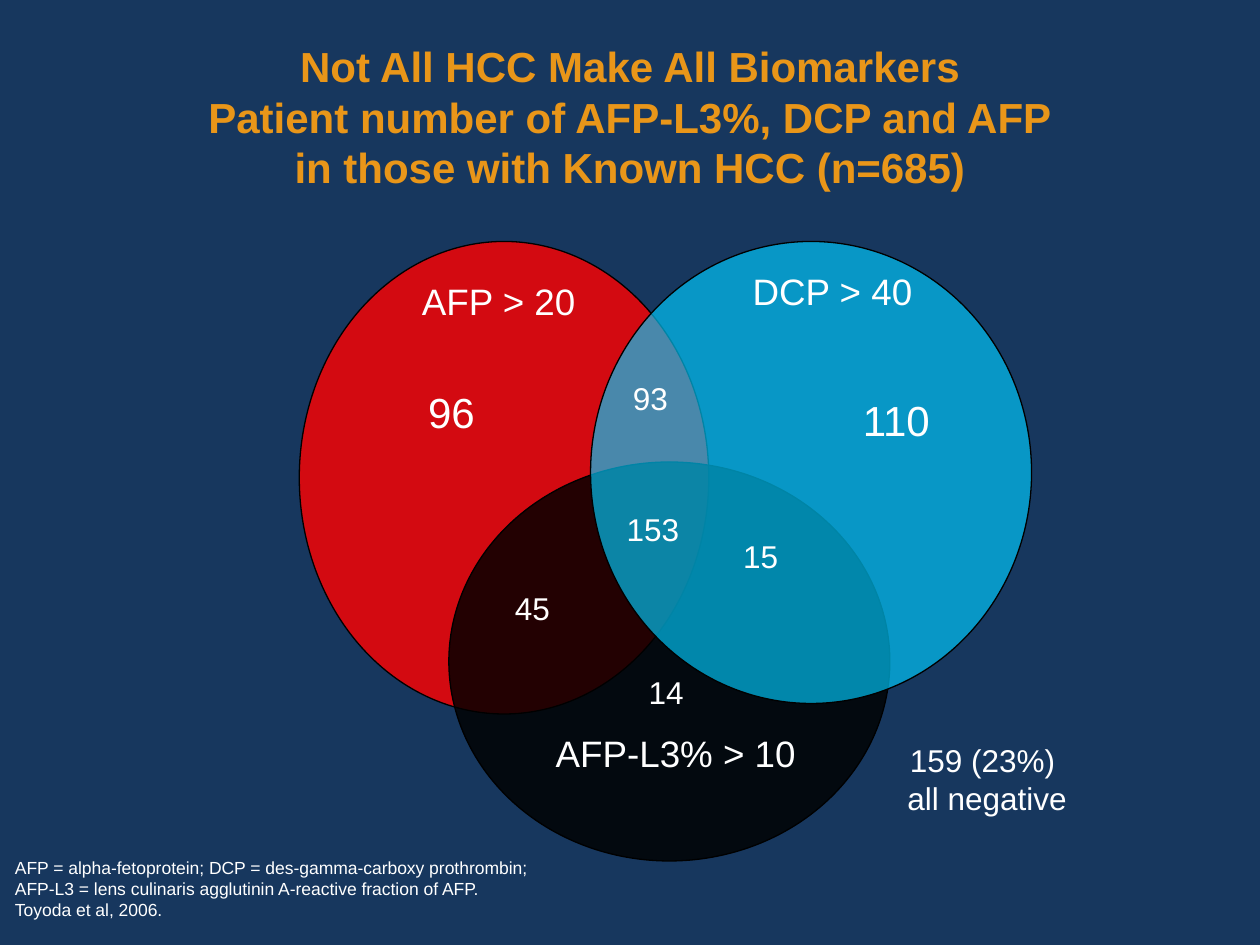
"""Draw a three-circle Venn slide of liver cancer biomarkers on a grid of 120 by 90 cells."""
import dataclasses
import typing

import lxml.etree
import pptx
import pptx.dml.color
import pptx.enum.shapes
import pptx.enum.text
import pptx.oxml.ns
import pptx.util

CELL = pptx.util.Inches(1) / 12
COLS, ROWS = 120, 90
FONT = "Arial"
HUES = {
    "back": "17375E",
    "title": "E99619",
    "text": "FFFFFF",
    "line": "000000",
    "red": "FF0000",
    "black": "000000",
    "blue": "00CCFF",
}
ALIGN = pptx.enum.text.PP_ALIGN


class Box(typing.NamedTuple):
    col: float
    row: float
    wide: float
    high: float

    def place(self) -> list[int]:
        return [round(part * CELL) for part in self]


@dataclasses.dataclass
class Ring:
    box: Box
    hue: str
    alpha: int


@dataclasses.dataclass
class Label:
    box: Box
    lines: list[str]
    size: int
    align: typing.Any = ALIGN.LEFT


RINGS = [
    Ring(Box(28.5, 23, 39, 45), "red", 81),
    Ring(Box(42.75, 44, 42, 38), "black", 83),
    Ring(Box(56.25, 23, 42, 44), "blue", 65),
]
NOTE = Label(
    Box(0.25, 81, 51.8, 7.3),
    [
        "AFP = alpha-fetoprotein; DCP = des-gamma-carboxy prothrombin;",
        "AFP-L3 = lens culinaris agglutinin A-reactive fraction of AFP.",
        "Toyoda et al, 2006.",
    ],
    10,
)
LABELS = [
    Label(Box(39, 26, 17.4, 5.4), ["AFP > 20"], 21),
    Label(Box(70.5, 25, 17.8, 5.4), ["DCP > 40"], 21),
    Label(Box(51.75, 69, 25.7, 5.4), ["AFP-L3% > 10"], 21),
    Label(Box(39.6, 36.2, 7.2, 6.1), ["96"], 24),
    Label(Box(81, 37, 9.2, 6.1), ["110"], 24),
    Label(Box(59.1, 35.5, 6, 4.8), ["93"], 18),
    Label(Box(58.5, 48, 7.6, 4.8), ["153"], 18),
    Label(Box(47.85, 55.5, 6, 4.8), ["45"], 18),
    Label(Box(60.6, 63.5, 6, 4.8), ["14"], 18),
    Label(Box(69.6, 50.55, 6, 4.8), ["15"], 18),
    Label(Box(85.1, 70, 17.8, 8.5), ["159 (23%) ", "all negative"], 18, ALIGN.CENTER),
]
TITLE = Label(
    Box(6, 3.6, 108, 15),
    [
        "Not All HCC Make All Biomarkers",
        "Patient number of AFP-L3%, DCP and AFP",
        "in those with Known HCC (n=685)",
    ],
    24,
    ALIGN.CENTER,
)


def color(name: str) -> pptx.dml.color.RGBColor:
    return pptx.dml.color.RGBColor.from_string(HUES[name])


def draw_ring(slide: typing.Any, ring: Ring) -> None:
    kind = pptx.enum.shapes.MSO_SHAPE.OVAL
    shape = slide.shapes.add_shape(kind, *ring.box.place())
    shape.shadow.inherit = False
    shape.fill.solid()
    shape.fill.fore_color.rgb = color(ring.hue)
    tag = pptx.oxml.ns.qn("a:srgbClr")
    fill = next(shape.element.spPr.iter(tag))
    alpha = lxml.etree.SubElement(fill, pptx.oxml.ns.qn("a:alpha"))
    alpha.set("val", str(ring.alpha * 1000))
    shape.line.color.rgb = color("line")
    shape.line.width = pptx.util.Pt(0.75)


def add_run(para: typing.Any, text: str, size: int, hue: str, bold: bool) -> None:
    run = para.add_run()
    run.text = text
    run.font.name = FONT
    run.font.size = pptx.util.Pt(size)
    run.font.bold = bold
    run.font.color.rgb = color(hue)


def draw_label(slide: typing.Any, label: Label) -> None:
    frame = slide.shapes.add_textbox(*label.box.place()).text_frame
    frame.word_wrap = False
    frame.auto_size = pptx.enum.text.MSO_AUTO_SIZE.SHAPE_TO_FIT_TEXT
    for rank, line in enumerate(label.lines):
        para = frame.add_paragraph() if rank else frame.paragraphs[0]
        para.alignment = label.align
        add_run(para, line, label.size, "text", False)


def draw_title(slide: typing.Any, label: Label) -> None:
    frame = slide.shapes.add_textbox(*label.box.place()).text_frame
    frame.word_wrap = True
    frame.vertical_anchor = pptx.enum.text.MSO_ANCHOR.MIDDLE
    para = frame.paragraphs[0]
    para.alignment = label.align
    for rank, line in enumerate(label.lines):
        if rank:
            para.add_line_break()
        add_run(para, line, label.size, "title", True)


def main() -> None:
    deck = pptx.Presentation()
    deck.slide_width = round(COLS * CELL)
    deck.slide_height = round(ROWS * CELL)
    slide = deck.slides.add_slide(deck.slide_layouts[6])
    slide.background.fill.solid()
    slide.background.fill.fore_color.rgb = color("back")
    draw_label(slide, NOTE)
    for ring in RINGS:
        draw_ring(slide, ring)
    for label in LABELS:
        draw_label(slide, label)
    draw_title(slide, TITLE)
    deck.save("out.pptx")


if __name__ == "__main__":
    main()
